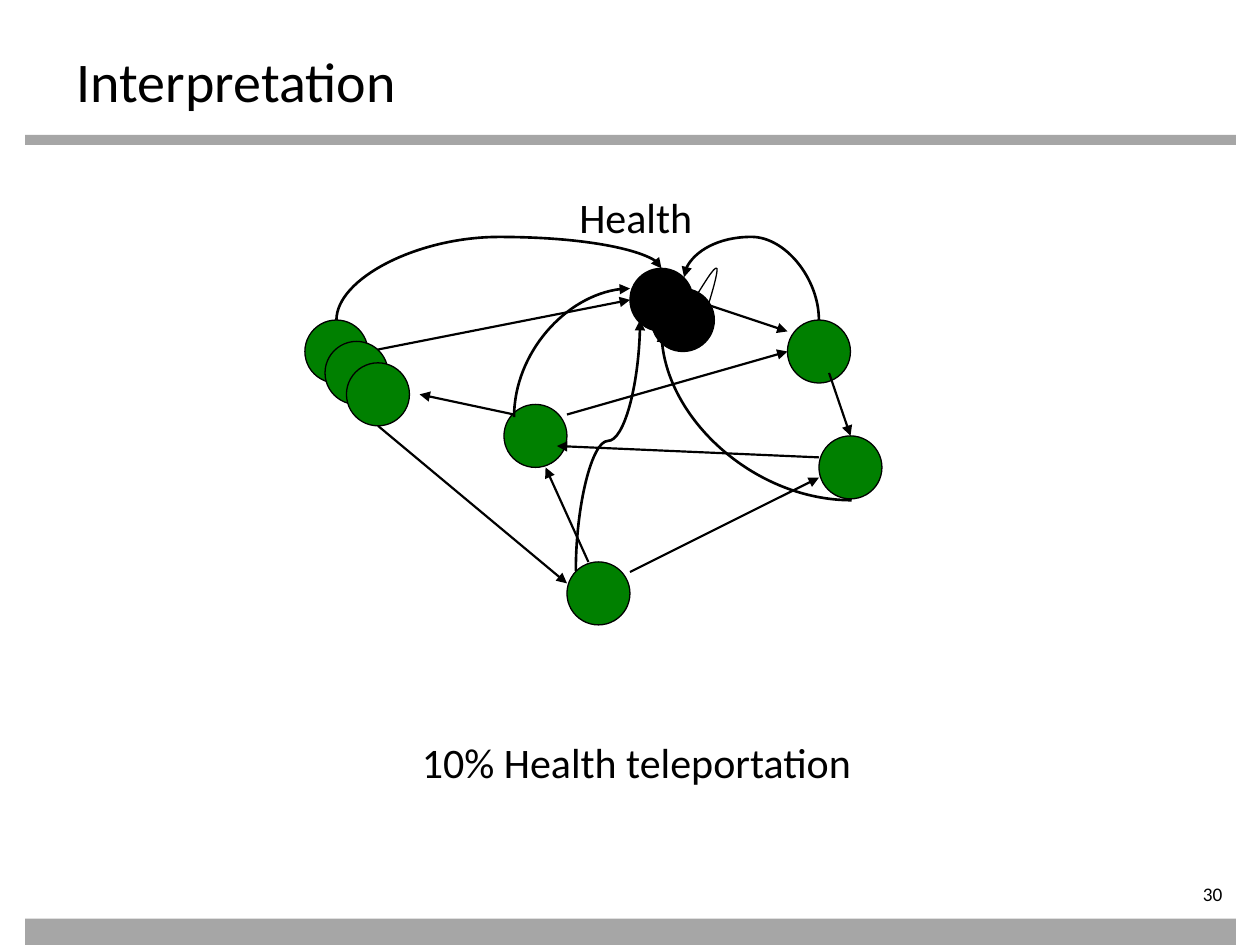
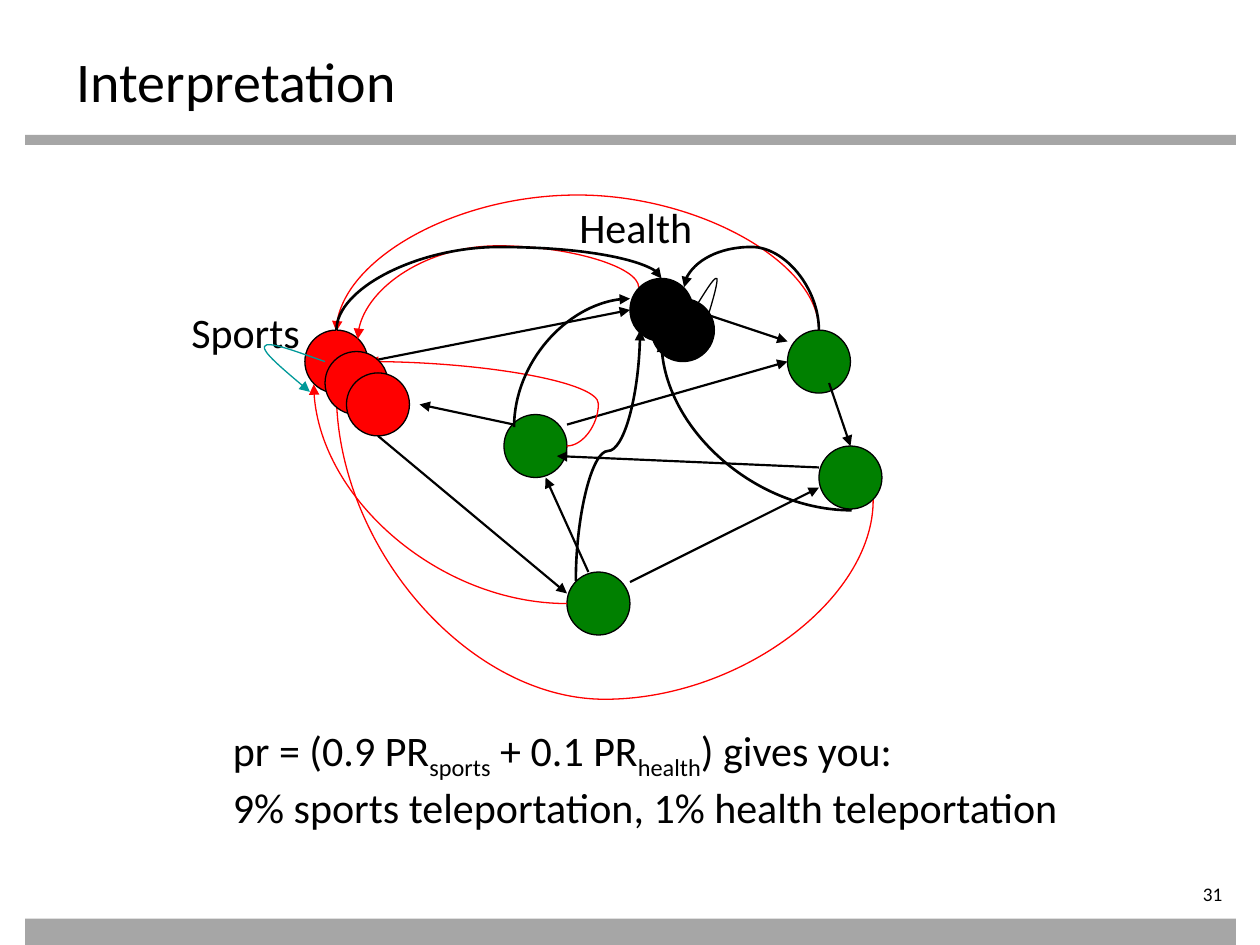
from dataclasses import dataclass

from lxml import etree
from pptx import Presentation
from pptx.dml.color import RGBColor
from pptx.enum.shapes import MSO_CONNECTOR, MSO_SHAPE
from pptx.enum.text import MSO_ANCHOR, PP_ALIGN
from pptx.oxml.ns import qn
from pptx.util import Cm, Pt

STRAIGHT, CURVE = MSO_CONNECTOR.STRAIGHT, MSO_CONNECTOR.CURVE
ELLIPSE, RECTANGLE = MSO_SHAPE.OVAL, MSO_SHAPE.RECTANGLE
LEFT, RIGHT = PP_ALIGN.LEFT, PP_ALIGN.RIGHT
TOP = MSO_ANCHOR.TOP
TITLE_ONLY = 5


@dataclass(frozen=True)
class Theme:
    font: str = "Calibri"
    ink: str = "000000"
    band: str = "A6A6A6"
    page_node: str = "008000"
    sports: str = "FF0000"
    sports_loop: str = "009999"
    title_size: int = 32
    label_size: int = 24
    number_size: int = 11
    thin: float = 0.75
    link: float = 1.25
    teleport: float = 1.5


THEME = Theme()
NODE_SIZE = 0.5

SPORTS_BACK = (2.42, 2.54)
SPORTS_FRONT = [(2.58, 2.71), (2.75, 2.88)]
HEALTH_BACK = (5, 2.13)
HEALTH_FRONT = (5.17, 2.29)
OTHER_NODES = [(4, 3.21), (4.5, 4.46), (6.25, 2.54), (6.5, 3.46)]

LINKS = [
    ((2.92, 2.79), (5, 2.38)),
    ((4.08, 3.29), (3.33, 3.13)),
    ((4.5, 3.29), (6.25, 2.79)),
    ((5, 4.54), (6.5, 3.79)),
    ((6.5, 3.63), (4.42, 3.54)),
    ((5.5, 2.38), (6.25, 2.63)),
    ((6.58, 2.96), (6.75, 3.46)),
    ((4.67, 4.46), (4.33, 3.71)),
]
FRONT_LINK = ((3, 3.38), (4.5, 4.63))

# start, end, rotation, flips, bend
HEALTH_CURVES = [
    ((6.5, 2.54), (5.43, 2.2), 90, "H", 1.88),
    ((4.57, 4.53), (5.08, 2.54), 270, "", 3.5),
    ((4.08, 3.31), (5, 2.29), 270, "", None),
    ((2.67, 2.54), (5.25, 2.13), 270, "", 1.88),
    ((6.76, 3.97), (5.25, 2.63), 180, "", None),
]
SPORTS_CURVES = [
    ((6.5, 2.54), (2.67, 2.55), 270, "HV", 1.45),
    ((5.07, 2.2), (2.84, 2.61), 270, "HV", 1.87),
    ((4.5, 4.71), (2.49, 2.97), 180, "", None),
    ((4.5, 3.46), (2.92, 2.79), 0, "HV", 4.75),
    ((6.93, 3.89), (2.67, 3.04), 270, "V", 5.47),
]
HEALTH_LOOP = [(5.5, 2.39), (5.59, 2.25), (5.67, 2.11), (5.69, 2.13),
               (5.7, 2.15), (5.65, 2.34), (5.59, 2.52)]
SPORTS_LOOP = [(2.58, 2.79), (2.35, 2.71), (2.12, 2.62), (2.1, 2.67),
               (2.08, 2.71), (2.27, 2.87), (2.46, 3.03)]


def length(inches):
    return Cm(inches * 2.54)


def lengths(*values):
    return [length(value) for value in values]


def lower(points, drop):
    return [(x, y + drop) for x, y in points]


def color(code):
    return RGBColor.from_string(code)


def add_filled(page, kind, box, fill):
    shape = page.shapes.add_shape(kind, *lengths(*box))
    shape.shadow.inherit = False
    shape.fill.solid()
    shape.fill.fore_color.rgb = color(fill)
    return shape


def add_bands(page):
    tree = page.slide_layout.shapes.element
    for number, (top, height) in enumerate([(1.07, 0.08), (7.29, 0.21)], 100):
        band = add_filled(page, RECTANGLE, (0.2, top, 9.61, height), THEME.band)
        band.line.fill.background()
        band.element.nvSpPr.cNvPr.set("id", str(number))
        tree.append(band.element)


def add_node(page, corner, fill, drop):
    x, y = corner
    node = add_filled(page, ELLIPSE, (x, y + drop, NODE_SIZE, NODE_SIZE), fill)
    node.line.color.rgb = color(THEME.ink)
    node.line.width = Pt(THEME.thin)


def style_arrow(arrow, ink, width):
    arrow.line.color.rgb = color(ink)
    arrow.line.width = Pt(width)
    properties = arrow.element.spPr
    etree.SubElement(properties.find(qn("a:ln")), qn("a:tailEnd"), type="triangle")
    if properties.find(qn("a:effectLst")) is None:
        etree.SubElement(properties, qn("a:effectLst"))


def add_link(page, ends, drop):
    start, end = lower(ends, drop)
    link = page.shapes.add_connector(STRAIGHT, *lengths(*start, *end))
    style_arrow(link, THEME.ink, THEME.link)


def add_curve(page, curve, ink, width, drop):
    start, end, rotation, flips, bend = curve
    turned = rotation in (90, 270)
    (x1, y1), (x2, y2) = lower([start, end], drop)
    across, down = abs(x2 - x1), abs(y2 - y1)
    if turned:
        across, down = down, across
    left, top = (x1 + x2 - across) / 2, (y1 + y2 - down) / 2
    arrow = page.shapes.add_connector(
        CURVE, *lengths(left, top, left + across, top + down))
    frame = arrow.element.spPr.find(qn("a:xfrm"))
    frame.set("rot", str(rotation * 60000))
    for flip in flips:
        frame.set("flip" + flip, "1")
    geometry = arrow.element.spPr.find(qn("a:prstGeom"))
    if bend is None:
        geometry.set("prst", "curvedConnector2")
    else:
        axis = 1 if turned else 0
        ratio = (bend - start[axis]) / (end[axis] - start[axis])
        etree.SubElement(geometry.find(qn("a:avLst")), qn("a:gd"),
                         name="adj1", fmla=f"val {round(ratio * 100000)}")
    style_arrow(arrow, ink, width)


def add_loop(page, points, ink, drop):
    start, *others = [lengths(*point) for point in lower(points, drop)]
    builder = page.shapes.build_freeform(*start)
    builder.add_line_segments(others, close=False)
    loop = builder.convert_to_shape()
    loop.shadow.inherit = False
    loop.fill.background()
    outline = next(loop.element.iter(qn("a:path")))
    segments = outline.findall(qn("a:lnTo"))
    for first in range(0, len(segments), 3):
        bezier = etree.SubElement(outline, qn("a:cubicBezTo"))
        for segment in segments[first:first + 3]:
            bezier.append(segment[0])
            outline.remove(segment)
    style_arrow(loop, ink, THEME.thin)


def write_span(para, text, size, baseline=0):
    span = para.add_run()
    span.text = text
    span.font.name = THEME.font
    span.font.size = Pt(size)
    span.font.color.rgb = color(THEME.ink)
    if baseline:
        span.font._element.set("baseline", str(baseline * 1000))


def add_label(page, box, lines):
    label = page.shapes.add_textbox(*lengths(*box))
    frame = label.text_frame
    frame.word_wrap = False
    for index, spans in enumerate(lines):
        para = frame.add_paragraph() if index else frame.paragraphs[0]
        para.alignment = LEFT
        for text, baseline in spans:
            write_span(para, text, THEME.label_size, baseline)


def add_title(page, text):
    title = page.shapes.title
    title.left, title.top, title.width, title.height = lengths(0.51, 0.28, 9, 0.55)
    frame = title.text_frame
    frame.vertical_anchor = TOP
    frame.margin_top = length(0.09)
    para = frame.paragraphs[0]
    para.alignment = LEFT
    write_span(para, text, THEME.title_size)


def add_page_number(page, number):
    box = page.shapes.add_textbox(*lengths(8.7, 7, 1.1, 0.22))
    frame = box.text_frame
    frame.word_wrap = True
    frame.margin_left = frame.margin_top = frame.margin_bottom = 0
    frame.margin_right = length(0.1)
    para = frame.paragraphs[0]
    para.alignment = RIGHT
    write_span(para, str(number), THEME.number_size)


def draw_graph(page, with_sports, drop):
    sports_fill = THEME.sports if with_sports else THEME.page_node
    add_node(page, SPORTS_BACK, sports_fill, drop)
    for corner in OTHER_NODES:
        add_node(page, corner, THEME.page_node, drop)
    for ends in LINKS:
        add_link(page, ends, drop)
    if with_sports:
        for curve in SPORTS_CURVES:
            add_curve(page, curve, THEME.sports, THEME.thin, drop)
        add_label(page, (1.42, 2.3 + drop, 1.1, 0.5), [[("Sports", 0)]])
    add_node(page, HEALTH_BACK, THEME.ink, drop)
    for curve in HEALTH_CURVES:
        add_curve(page, curve, THEME.ink, THEME.teleport, drop)
    add_label(page, (4.5, 1.47 + drop, 1.13, 0.5), [[("Health", 0)]])
    for corner in SPORTS_FRONT:
        add_node(page, corner, sports_fill, drop)
    add_node(page, HEALTH_FRONT, THEME.ink, drop)
    add_link(page, FRONT_LINK, drop)
    if with_sports:
        add_loop(page, SPORTS_LOOP, THEME.sports_loop, drop)
    add_loop(page, HEALTH_LOOP, THEME.ink, drop)


def add_page(deck, number):
    page = deck.slides.add_slide(deck.slide_layouts[TITLE_ONLY])
    add_title(page, "Interpretation")
    add_page_number(page, number)
    return page


def main():
    deck = Presentation()
    deck.slide_width, deck.slide_height = lengths(10, 7.5)

    health_page = add_page(deck, 30)
    add_bands(health_page)
    draw_graph(health_page, with_sports=False, drop=0)
    add_label(health_page, (3.25, 5.8, 3.73, 0.5),
              [[("10% Health teleportation", 0)]])

    mixed_page = add_page(deck, 31)
    draw_graph(mixed_page, with_sports=True, drop=0.08)
    add_label(mixed_page, (1.75, 5.7, 6.97, 0.91), [
        [("pr = (0.9 PR", 0), ("sports", -25), (" + 0.1 PR", 0),
         ("health", -25), (") gives you:", 0)],
        [("9% sports teleportation, 1% health teleportation", 0)],
    ])

    deck.save("out.pptx")


if __name__ == "__main__":
    main()
